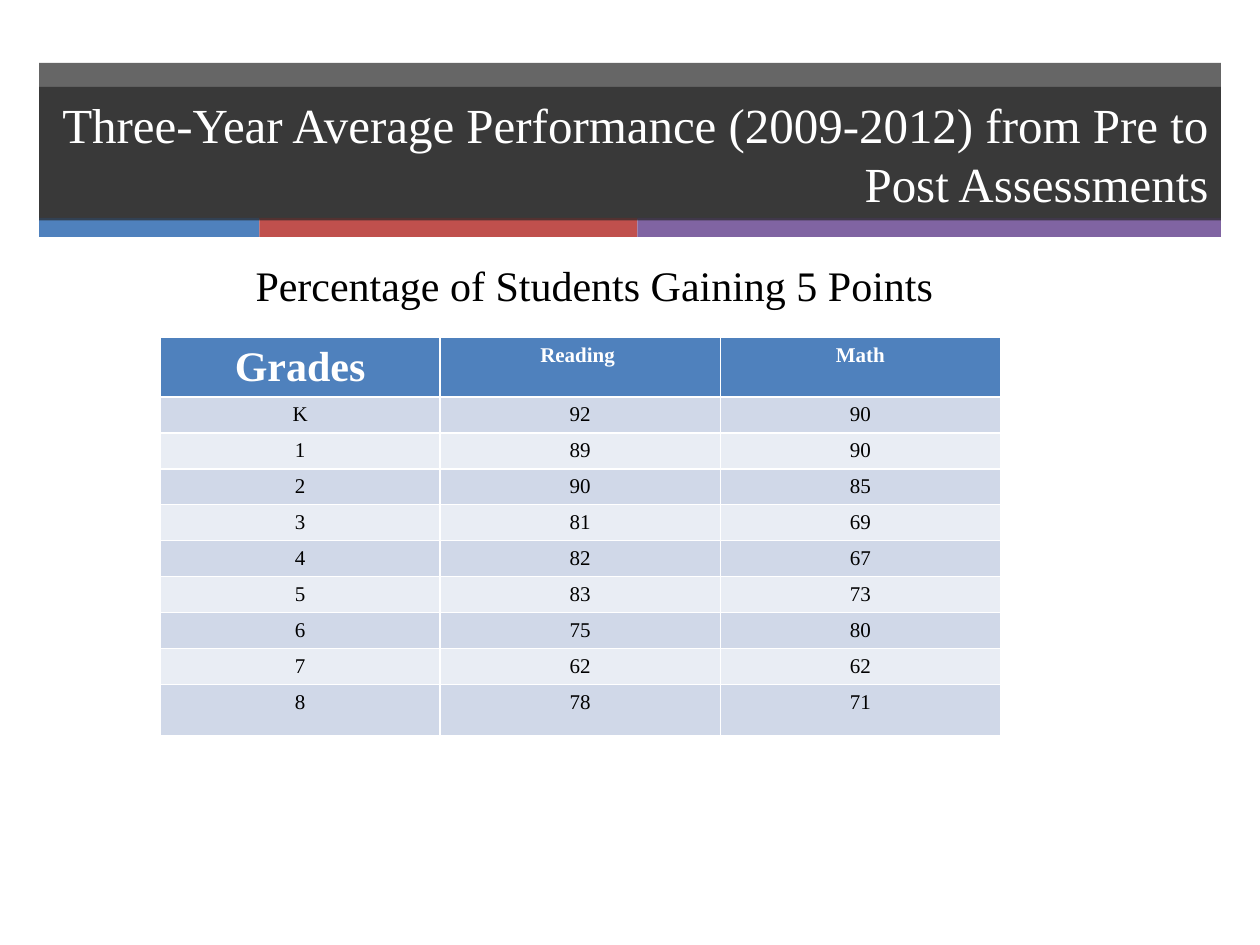
from pptx import Presentation
from pptx.dml.color import RGBColor
from pptx.enum.shapes import MSO_SHAPE
from pptx.enum.text import MSO_ANCHOR, PP_ALIGN
from pptx.oxml.ns import qn
from pptx.util import Inches, Pt
from lxml import etree

RECT = MSO_SHAPE.RECTANGLE
CENTER, RIGHT = PP_ALIGN.CENTER, PP_ALIGN.RIGHT
MIDDLE = MSO_ANCHOR.MIDDLE
FONT = "Times New Roman"

# Content
TITLE = "Three-Year Average Performance (2009-2012) from Pre to Post Assessments"
SUBTITLE = "Percentage of Students Gaining 5 Points"
HEADER = ("Grades", "Reading ", "Math")
SCORES = [
    ("K", 92, 90), ("1", 89, 90), ("2", 90, 85),
    ("3", 81, 69), ("4", 82, 67), ("5", 83, 73),
    ("6", 75, 80), ("7", 62, 62), ("8", 78, 71),
]
STRIPES = [("4F81BD", 1.75), ("C0504D", 3), ("8064A2", 4.63)]
BANDS = ("D0D8E8", "E9EDF4")
LEFT, WIDTH = 0.31, 9.38


def rgb(color):
    return RGBColor.from_string(color)


def add_bar(s, x, y, w, h, color, alpha=None):
    sp = s.shapes.add_shape(RECT, Inches(x), Inches(y), Inches(w), Inches(h))
    sp.shadow.inherit = False
    sp.fill.solid()
    sp.fill.fore_color.rgb = rgb(color)
    sp.line.fill.background()
    if alpha:
        clr = sp._element.spPr.find(qn("a:solidFill"))[0]
        etree.SubElement(clr, qn("a:alpha")).set("val", str(alpha * 1000))
    return sp


def write(tf, text, size, color, align=None, bold=False):
    p = tf.paragraphs[0]
    p.text = str(text)
    p.alignment = align
    p.font.name, p.font.size, p.font.bold = FONT, Pt(size), bold
    p.font.color.rgb = rgb(color)


prs = Presentation()
prs.slide_width, prs.slide_height = Inches(10), Inches(7.5)
s = prs.slides.add_slide(prs.slide_layouts[6])

# Banner with coloured stripes and title
add_bar(s, LEFT, 0.5, WIDTH, 1.24, "262626", 70)
x = LEFT
for color, w in STRIPES:
    add_bar(s, x, 1.73, w, 0.15, color)
    x += w
title = add_bar(s, LEFT, 0.69, WIDTH, 1.06, "262626", 70)
title.text_frame.word_wrap = True
title.text_frame.vertical_anchor = MIDDLE
write(title.text_frame, TITLE, 28, "FFFFFF", RIGHT)

# Score table
rows = [HEADER] + SCORES
heights = [0.47] + [0.28] * (len(SCORES) - 1) + [0.41]
table = s.shapes.add_table(len(rows), len(HEADER), Inches(1.27), Inches(2.68),
                           Inches(6.67), Inches(sum(heights))).table
for i, (values, height) in enumerate(zip(rows, heights)):
    table.rows[i].height = Inches(height)
    head = i == 0
    for j, value in enumerate(values):
        cell = table.cell(i, j)
        cell.fill.solid()
        cell.fill.fore_color.rgb = rgb("4F81BD" if head else BANDS[(i - 1) % 2])
        write(cell.text_frame, value, 24 if head and j == 0 else 12,
              "FFFFFF" if head else "000000", CENTER, head)

# Subtitle
box = s.shapes.add_textbox(Inches(1.93), Inches(2.01), Inches(6), Inches(0.5))
box.text_frame.word_wrap = True
write(box.text_frame, SUBTITLE, 24, "000000")

prs.save("out.pptx")
